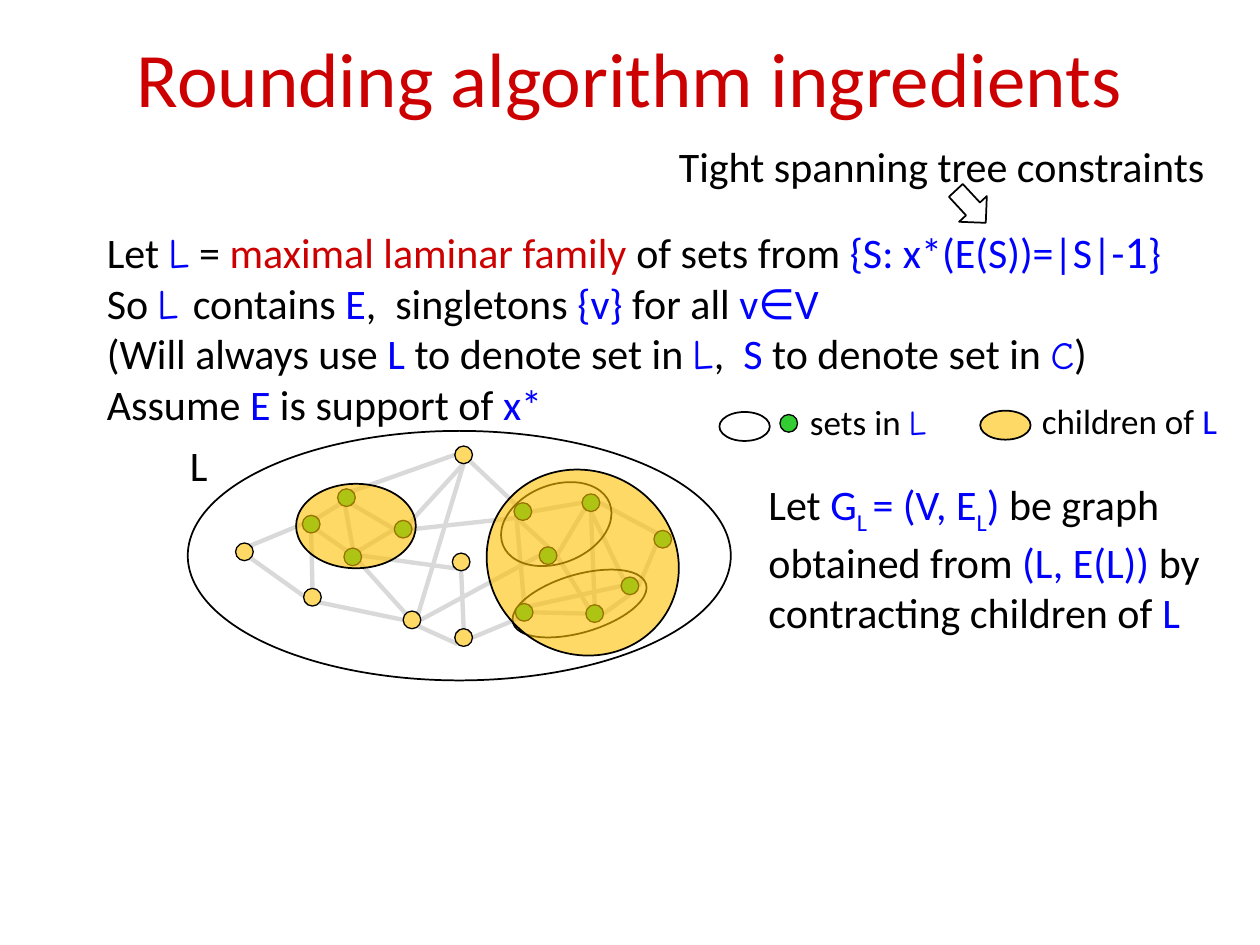
from lxml import etree
from pptx import Presentation
from pptx.dml.color import RGBColor
from pptx.enum.shapes import MSO_CONNECTOR, MSO_SHAPE
from pptx.enum.text import MSO_ANCHOR, PP_ALIGN
from pptx.oxml.ns import qn
from pptx.util import Inches, Pt

STRAIGHT = MSO_CONNECTOR.STRAIGHT
ELLIPSE, RIGHT_ARROW = MSO_SHAPE.OVAL, MSO_SHAPE.RIGHT_ARROW
MIDDLE, CENTER = MSO_ANCHOR.MIDDLE, PP_ALIGN.CENTER

BLACK, BLUE, RED = "000000", "0000FF", "CC0000"
GREEN, AMBER, GREY = "33CC33", "FFC000", "D9D9D9"
BODY, SCRIPT = "Calibri", "Comic Neue"
NODE_SIZE = 0.14

STYLES = {
    "plain": {"color": BLACK},
    "blue": {"color": BLUE},
    "red": {"color": RED},
    "script": {"color": BLUE, "name": SCRIPT},
    "small script": {"color": BLUE, "name": SCRIPT, "size": 22},
    "large blue": {"color": BLUE, "size": 26},
    "subscript": {"color": BLUE, "baseline": "-25000"},
}

DEFINITIONS = [
    [("Let ", "plain"), ("L", "script"), (" = ", "plain"), ("maximal laminar family", "red"),
     (" of sets from ", "plain"), ("{S: x*(E(S))=|S|-", "blue"), ("1", "large blue"), ("}", "blue")],
    [("So ", "plain"), ("L ", "script"), ("contains ", "plain"), ("E", "blue"),
     (",  singletons ", "plain"), ("{v}", "blue"), (" for all ", "plain"), ("v∈V", "blue")],
    [("(Will always use ", "plain"), ("L", "blue"), (" to denote set in ", "plain"),
     ("L", "script"), (",  ", "plain"), ("S", "blue"), (" to denote set in ", "plain"),
     ("C", "small script"), (")", "plain")],
    [("Assume ", "plain"), ("E", "blue"), (" is support of ", "plain"), ("x*", "blue")],
]
CONTRACTED_GRAPH = [
    [("Let ", "plain"), ("G", "blue"), ("L ", "subscript"), ("= (V, E", "blue"),
     ("L", "subscript"), (") ", "blue"), ("be graph obtained from ", "plain"),
     ("(L, E(L)) ", "blue"), ("by contracting children of ", "plain"), ("L", "blue")],
]
TEXTS = [
    ((0.75, 1.72, 8.84, 1.75), 24, DEFINITIONS),
    ((5.29, 1.07, 4.37, 0.5), 24, [[("Tight spanning tree constraints", "plain")]]),
    ((6, 3.75, 3.85, 1.31), 24, CONTRACTED_GRAPH),
    ((1.41, 3.44, 0.37, 0.5), 24, [[("L", "plain")]]),
    ((6.33, 3.13, 1.39, 0.44), 20, [[("sets in ", "plain"), ("L", "script")]]),
    ((8.17, 3.12, 1.63, 0.44), 20, [[("children of ", "plain"), ("L", "blue")]]),
]
EDGES = [
    (3.34, 4.92, 4.28, 4.41), (4.1, 4.11, 4.16, 4.79), (4.1, 4.01, 3.73, 3.66),
    (1.99, 4.43, 2.41, 4.73), (1.99, 4.33, 2.4, 4.16), (2.47, 4.23, 2.48, 4.67),
    (2.52, 4.21, 2.75, 4.37), (2.87, 4.41, 3.61, 4.51), (2.79, 3.9, 3.61, 3.61),
    (2.53, 4.78, 3.2, 4.92), (2.85, 4.46, 3.22, 4.87), (4.76, 3.99, 5.21, 4.23),
    (4.22, 4.06, 4.62, 3.99), (4.42, 4.41, 4.64, 4.04), (4.42, 4.41, 4.67, 4.82),
    (4.23, 4.86, 4.65, 4.87), (4.21, 4.81, 4.93, 4.65), (4.69, 4.06, 4.95, 4.6),
    (4.79, 4.87, 5, 4.72), (5.07, 4.65, 5.21, 4.32), (3.66, 4.53, 3.68, 4.99),
    (2.79, 4, 3.13, 4.2), (2.74, 4.02, 2.8, 4.35), (2.85, 4.37, 3.13, 4.2),
    (3.27, 4.2, 4.1, 4.11), (3.25, 4.15, 3.68, 3.68), (3.68, 3.68, 3.32, 4.87),
    (3.32, 4.97, 3.63, 5.11), (3.75, 5.06, 4.11, 4.91), (4.69, 4.06, 4.72, 4.8),
    (4.1, 4.11, 4.35, 4.34), (2.52, 4.11, 2.7, 4),
]
SETS = [
    ((1.49, 3.42, 4.31, 1.98), 0),
    ((3.96, 3.85, 0.91, 0.62), 338.5),
    ((4.05, 4.56, 1.1, 0.46), 343.7),
    ((5.71, 3.27, 0.4, 0.23), 0),
]
CHILDREN = [
    ((7.78, 3.26, 0.4, 0.23), 0),
    ((2.35, 3.84, 0.95, 0.67), 0),
    ((3.85, 3.74, 1.55, 1.45), 30.3),
]
SINGLETON_CHILDREN = [
    (1.87, 4.31), (2.41, 4.67), (3.2, 4.85), (3.59, 4.39), (3.61, 3.54), (3.61, 4.99),
]
INNER_NODES = [
    (2.4, 4.09), (2.68, 3.88), (2.73, 4.35), (4.08, 3.99), (4.62, 3.92), (4.28, 4.34),
    (4.09, 4.79), (4.93, 4.58), (4.65, 4.8), (5.19, 4.21), (3.13, 4.13), (6.19, 3.29),
]


def rgb(value):
    """Turn a hex string into a colour."""
    return RGBColor.from_string(value)


def format_run(run, size, style):
    """Apply a text style to one run."""
    look = {"name": BODY, "size": size, **style}
    for attribute, value in {"name": look["name"], "size": Pt(look["size"])}.items():
        setattr(run.font, attribute, value)
    run.font.color.rgb = rgb(look["color"])
    if "baseline" in look:
        run.font._element.set("baseline", look["baseline"])


def add_text(slide, box, size, paragraphs):
    """Add a wrapped text box of styled runs."""
    frame = slide.shapes.add_textbox(*map(Inches, box)).text_frame
    frame.word_wrap = True
    for index, pieces in enumerate(paragraphs):
        paragraph = frame.add_paragraph() if index else frame.paragraphs[0]
        for words, style in pieces:
            run = paragraph.add_run()
            run.text = words
            format_run(run, size, STYLES[style])


def add_title(slide, words):
    """Place and format the slide title."""
    title = slide.shapes.title
    box = {"left": 0.75, "top": 0.15, "width": 8.5, "height": 0.92}
    for attribute, value in box.items():
        setattr(title, attribute, Inches(value))
    title.text_frame.text = words
    title.text_frame.vertical_anchor = MIDDLE
    paragraph = title.text_frame.paragraphs[0]
    paragraph.alignment = CENTER
    format_run(paragraph.runs[0], 44, STYLES["red"])


def add_edge(slide, ends):
    """Draw one graph edge."""
    edge = slide.shapes.add_connector(STRAIGHT, *map(Inches, ends))
    edge.line.color.rgb = rgb(GREY)
    edge.line.width = Pt(2.5)
    etree.SubElement(edge._element.spPr, qn("a:effectLst"))


def add_outline(slide, kind, box, rotation=0, fill=None, opacity=100, weight=1):
    """Draw a black-outlined shape with an optional, possibly translucent fill."""
    shape = slide.shapes.add_shape(kind, *map(Inches, box))
    shape.rotation = rotation
    shape.shadow.inherit = False
    shape.line.color.rgb = rgb(BLACK)
    shape.line.width = Pt(weight)
    if fill is None:
        shape.fill.background()
        return
    shape.fill.solid()
    shape.fill.fore_color.rgb = rgb(fill)
    if opacity < 100:
        color = shape._element.spPr.find(qn("a:solidFill"))[0]
        etree.SubElement(color, qn("a:alpha"), val=str(opacity * 1000))


def add_nodes(slide, corners, fill, opacity=100):
    """Draw equal graph nodes at the given corners."""
    for corner in corners:
        add_outline(slide, ELLIPSE, (*corner, NODE_SIZE, NODE_SIZE), 0, fill, opacity, 0.75)


def main():
    """Build and save the slide."""
    deck = Presentation()
    deck.slide_width, deck.slide_height = Inches(10), Inches(7.5)
    slide = deck.slides.add_slide(deck.slide_layouts[5])
    add_title(slide, "Rounding algorithm ingredients")
    for box, size, paragraphs in TEXTS:
        add_text(slide, box, size, paragraphs)
    add_outline(slide, RIGHT_ARROW, (7.53, 1.49, 0.35, 0.3), 47.2)
    for ends in EDGES:
        add_edge(slide, ends)
    for box, rotation in SETS:
        add_outline(slide, ELLIPSE, box, rotation)
    add_nodes(slide, SINGLETON_CHILDREN, AMBER, 60)
    add_nodes(slide, INNER_NODES, GREEN)
    for box, rotation in CHILDREN:
        add_outline(slide, ELLIPSE, box, rotation, AMBER, 60)
    deck.save("out.pptx")


if __name__ == "__main__":
    main()
